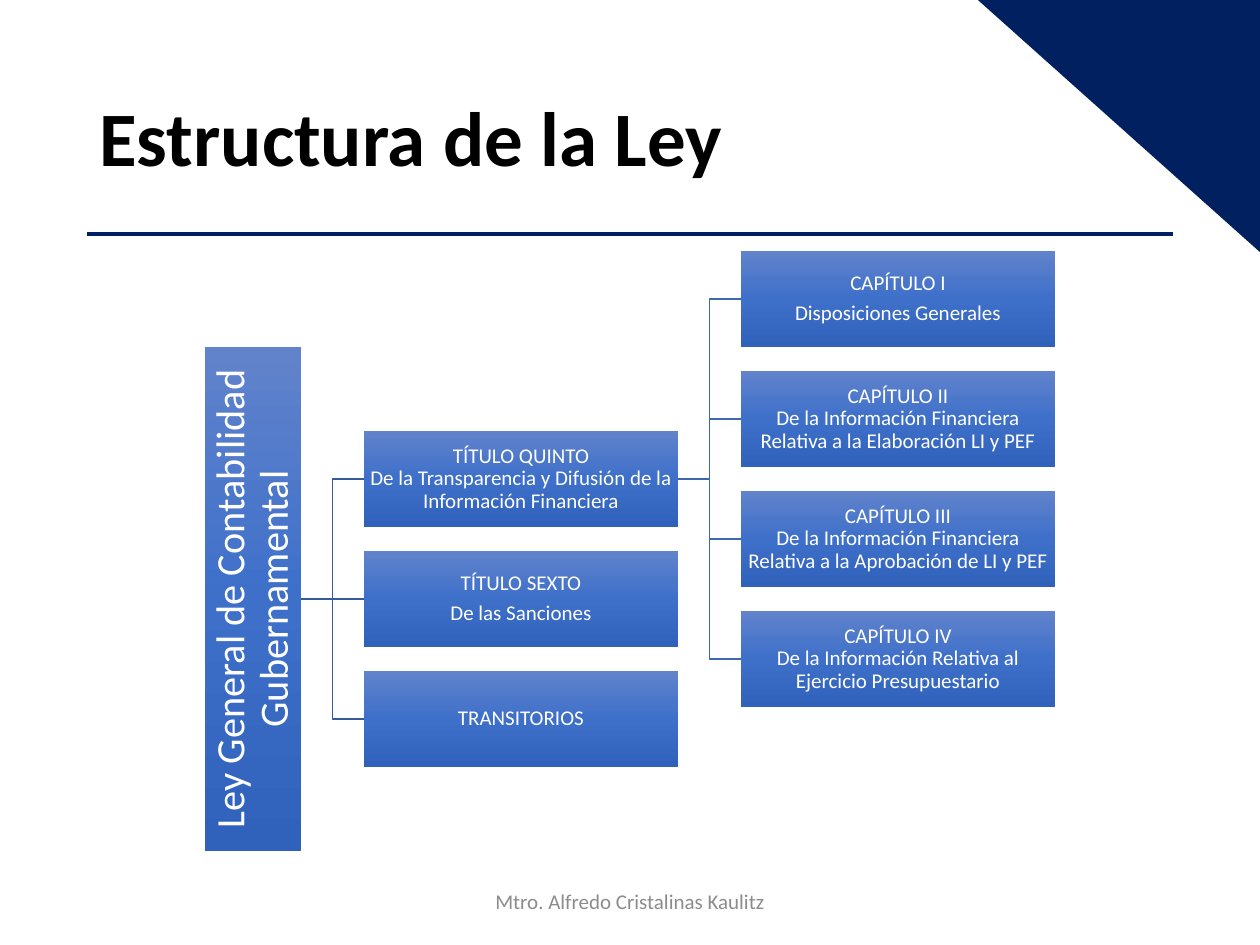
from lxml import etree
from pptx import Presentation
from pptx.dml.color import RGBColor as RGB
from pptx.enum.shapes import MSO_CONNECTOR as LINK, MSO_SHAPE as SHAPE
from pptx.enum.text import MSO_ANCHOR as ANCHOR, PP_ALIGN as ALIGN
from pptx.oxml import parse_xml
from pptx.oxml.ns import nsdecls, qn
from pptx.util import Emu, Pt

NAVY = RGB(0x00, 0x20, 0x60)
BLACK = RGB(0, 0, 0)
WHITE = RGB(255, 255, 255)
GRAY = RGB(0x8C, 0x8C, 0x8C)
LINK_1 = RGB(0x36, 0x5B, 0x9D)
LINK_2 = RGB(0x3E, 0x67, 0xB2)
STOPS = [(0, RGB(0x61, 0x83, 0xCB)), (50, RGB(0x3E, 0x70, 0xCA)),
         (100, RGB(0x30, 0x62, 0xBB))]

FONT = "Calibri"
BOX_W, BOX_H, PITCH = 314, 96, 120
ROOT_X, ROOT_H, MID_Y = 205, 504, 599
TITLE_X, CHAP_X = 364, 741

ROOT = "Ley General de Contabilidad Gubernamental"
# "\v" breaks a line, "\n" starts a paragraph
TITLES = [
    "TÍTULO QUINTO\vDe la Transparencia y Difusión de la Información Financiera",
    "TÍTULO SEXTO\nDe las Sanciones",
    "TRANSITORIOS",
]
CHAPS = [
    "CAPÍTULO I\nDisposiciones Generales",
    "CAPÍTULO II\vDe la Información Financiera Relativa a la Elaboración LI y PEF",
    "CAPÍTULO III\vDe la Información Financiera Relativa a la Aprobación de LI y PEF",
    "CAPÍTULO IV\vDe la Información Relativa al Ejercicio Presupuestario",
]


def px(n):
    return Emu(round(n * 914400 / 126))


def write(frame, text, size, color, align=ALIGN.CENTER, space=0.9, bold=False):
    frame.word_wrap = True
    frame.vertical_anchor = ANCHOR.MIDDLE
    frame.text = text
    for i, para in enumerate(frame.paragraphs):
        para.alignment = align
        para.line_spacing = space
        if i:
            para.space_before = Pt(4.2)
        for run in para.runs:
            font = run.font
            font.name, font.size, font.bold = FONT, Pt(size), bold
            font.color.rgb = color


def add_text(slide, x, y, w, h, text, size, color, **style):
    box = slide.shapes.add_textbox(px(x), px(y), px(w), px(h))
    write(box.text_frame, text, size, color, **style)


def shade(shape):
    """Fill a shape with the blue gradient, light at the top."""
    stops = "".join(f'<a:gs pos="{pos * 1000}"><a:srgbClr val="{color}"/></a:gs>'
                    for pos, color in STOPS)
    grad = parse_xml(f'<a:gradFill {nsdecls("a")}><a:gsLst>{stops}</a:gsLst>'
                     '<a:lin ang="5400000" scaled="0"/></a:gradFill>')
    shape.line.fill.background()
    shape.element.spPr.find(qn("a:prstGeom")).addnext(grad)


def add_box(slide, x, y, w, h, text, size, inset):
    box = slide.shapes.add_shape(SHAPE.RECTANGLE, px(x), px(y), px(w), px(h))
    box.shadow.inherit = False
    shade(box)
    frame = box.text_frame
    frame.margin_left = frame.margin_right = px(inset)
    frame.margin_top = frame.margin_bottom = px(inset)
    write(frame, text, size, WHITE)
    return box


def add_line(slide, x1, y1, x2, y2, color, width):
    line = slide.shapes.add_connector(LINK.STRAIGHT, px(x1), px(y1), px(x2), px(y2))
    line.line.color.rgb = color
    line.line.width = Pt(width)
    etree.SubElement(line.element.spPr, qn("a:effectLst"))


def add_elbow(slide, x1, y1, x2, y2, color):
    mid = (x1 + x2) / 2
    path = slide.shapes.build_freeform(px(x1), px(y1))
    path.add_line_segments([(px(mid), px(y1)), (px(mid), px(y2)), (px(x2), px(y2))],
                           close=False)
    elbow = path.convert_to_shape()
    elbow.shadow.inherit = False
    elbow.fill.background()
    elbow.line.color.rgb = color
    elbow.line.width = Pt(1)


def add_branch(slide, from_x, mid_y, x, texts, color):
    """Add a column of boxes centred on mid_y, each linked to its parent."""
    rows = [mid_y + (i - (len(texts) - 1) / 2) * PITCH for i in range(len(texts))]
    for y in rows:
        if y == mid_y:
            add_line(slide, from_x, y, x, y, color, 1)
        else:
            add_elbow(slide, from_x, mid_y, x, y, color)
    for y, text in zip(rows, texts):
        add_box(slide, x, y - BOX_H / 2, BOX_W, BOX_H, text, 12, 1)
    return rows


def add_frame(slide):
    corner = slide.shapes.add_shape(SHAPE.RIGHT_TRIANGLE, px(977), px(-2), px(283), px(253))
    corner.rotation = 180
    corner.shadow.inherit = False
    corner.fill.solid()
    corner.fill.fore_color.rgb = NAVY
    corner.line.color.rgb = NAVY
    corner.line.width = Pt(1)
    add_line(slide, 87, 234, 1173, 234, NAVY, 2.25)


def main():
    deck = Presentation()
    deck.slide_width, deck.slide_height = px(1260), px(945)
    slide = deck.slides.add_slide(deck.slide_layouts[6])

    # Corner, rule and heading
    add_frame(slide)
    add_text(slide, 87, 50, 965, 183, "Estructura de la Ley", 44, BLACK,
             align=ALIGN.LEFT, bold=True)

    # Tree: law, titles, chapters of the first title
    root = add_box(slide, ROOT_X, MID_Y - ROOT_H / 2, BOX_H, ROOT_H, ROOT, 23, 2)
    root.text_frame._txBody.bodyPr.set("vert", "vert270")
    rows = add_branch(slide, ROOT_X + BOX_H, MID_Y, TITLE_X, TITLES, LINK_1)
    add_branch(slide, TITLE_X + BOX_W, rows[0], CHAP_X, CHAPS, LINK_2)

    # Footer
    add_text(slide, 417, 876, 426, 50, "Mtro. Alfredo Cristalinas Kaulitz", 12, GRAY,
             space=1.0)
    deck.save("out.pptx")


if __name__ == "__main__":
    main()
